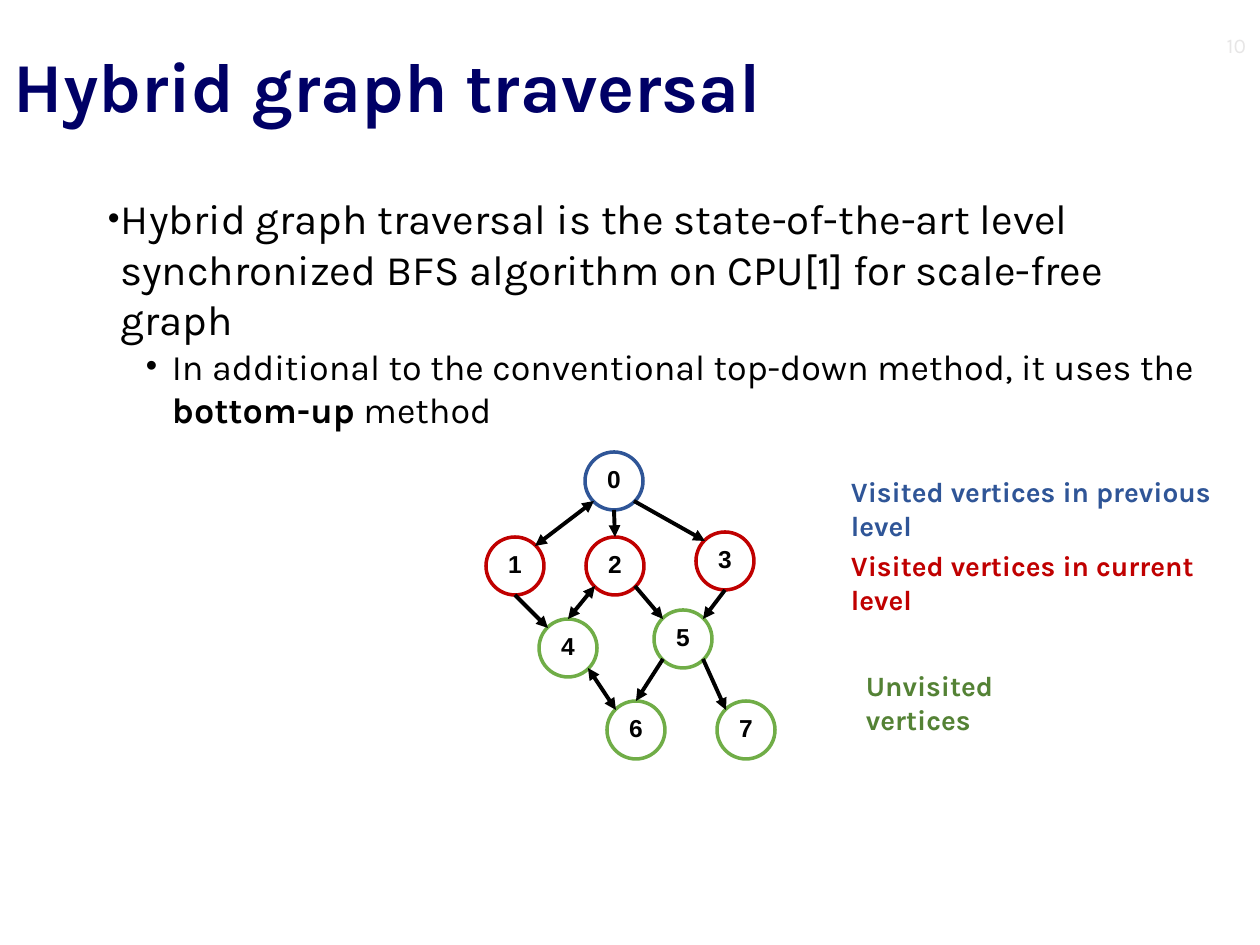
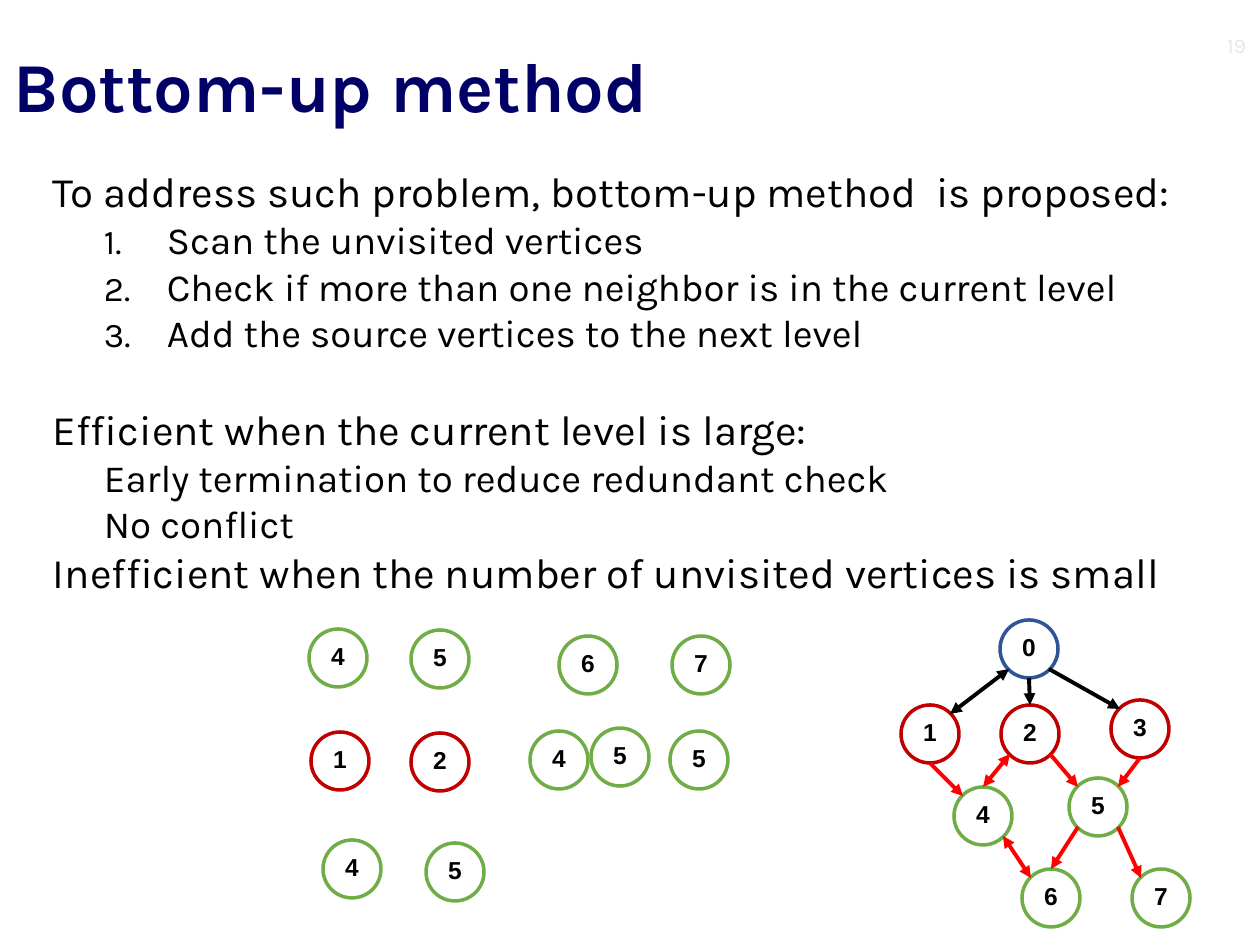
from lxml import etree
from pptx import Presentation
from pptx.dml.color import RGBColor
from pptx.enum.shapes import MSO_CONNECTOR as Line, MSO_SHAPE as Shape
from pptx.enum.text import MSO_ANCHOR as Anchor, PP_ALIGN as Align
from pptx.oxml.ns import qn
from pptx.util import Pt

EMU_PER_PX = 914400 / 126
NAVY = RGBColor(0x00, 0x00, 0x66)
BLACK = RGBColor(0x00, 0x00, 0x00)
WHITE = RGBColor(0xFF, 0xFF, 0xFF)
PALE = RGBColor(0xE7, 0xE6, 0xE6)
BLUE = RGBColor(0x2F, 0x55, 0x97)
CRIMSON = RGBColor(0xC0, 0x00, 0x00)
RED = RGBColor(0xFF, 0x00, 0x00)
GREEN = RGBColor(0x70, 0xAD, 0x47)
DARK_GREEN = RGBColor(0x54, 0x82, 0x35)

DIAMETER = 58
# Where edges touch a vertex, from its top left corner
SITES = {"top": (29, 0), "bottom": (29, 58), "top left": (9, 9),
         "top right": (49, 9), "bottom left": (9, 49), "bottom right": (49, 49)}

# Graph: label, left, top, colour
VERTICES = [
    ("1", 486, 537, CRIMSON), ("2", 586, 537, CRIMSON), ("3", 696, 532, CRIMSON),
    ("7", 717, 701, GREEN), ("6", 607, 701, GREEN), ("5", 654, 610, GREEN),
    ("4", 539, 619, GREEN), ("0", 585, 452, BLUE),
]
# Start vertex and site, end vertex and site, arrowheads at both ends
EDGES = [
    ("0", "bottom left", "1", "top right", True),
    ("0", "bottom right", "3", "top left", False),
    ("0", "bottom", "2", "top", False),
    ("4", "top", "2", "bottom left", True),
    ("1", "bottom", "4", "top left", False),
    ("2", "bottom right", "5", "top left", False),
    ("3", "bottom", "5", "top right", False),
    ("6", "top left", "4", "bottom right", True),
    ("5", "bottom left", "6", "top", False),
    ("5", "bottom right", "7", "top left", False),
]

# Body lines: text (bold between **), size, left margin, indent, bullet, bullet %, space before
HYBRID_BODY = [
    ("Hybrid graph traversal is the state-of-the-art level synchronized BFS "
     "algorithm on CPU[1] for scale-free graph", 24, 13, -13, "•", 80, 0),
    ("In additional to the conventional top-down method, it uses the "
     "**bottom-up** method", 20.5, 64, -26, "•", 90, 0),
]
BOTTOM_UP_BODY = [
    ("To address such problem, bottom-up method  is proposed:", 24, 0, 0, None, 0, 0),
    ("Scan the unvisited vertices", 22, 114, -63, "1.", 90, 0),
    ("Check if more than one neighbor is in the current level", 22, 114, -63, "1.", 90, 0),
    ("Add the source vertices to the next level", 22, 114, -63, "1.", 90, 0),
    ("Efficient when the current level is large:", 24, 0, 0, None, 0, 28),
    ("Early termination to reduce redundant check", 22, 51, 0, None, 0, 0),
    ("No conflict", 22, 51, 0, None, 0, 0),
    ("Inefficient when the number of unvisited vertices is small", 24, 0, 0, None, 0, 0),
]


def px(*lengths):
    return [round(length * EMU_PER_PX) for length in lengths]


def add_text(page, place, lines, color=BLACK, bold=None, anchor=Anchor.TOP, align=Align.LEFT):
    frame = page.shapes.add_textbox(*px(*place)).text_frame
    frame.word_wrap = True
    frame.vertical_anchor = anchor
    frame.margin_left, frame.margin_right, frame.margin_top, frame.margin_bottom = px(14, 14, 7, 7)
    for index, (text, size, margin, indent, bullet, percent, space) in enumerate(lines):
        para = frame.paragraphs[0] if index == 0 else frame.add_paragraph()
        para.alignment = align
        para.space_before = Pt(space)
        props = para._p.get_or_add_pPr()
        props.set("marL", str(px(margin)[0]))
        props.set("indent", str(px(indent)[0]))
        if bullet:
            etree.SubElement(props, qn("a:buSzPct"), val=str(percent * 1000))
            if bullet == "1.":
                etree.SubElement(props, qn("a:buAutoNum"), type="arabicPeriod")
            else:
                etree.SubElement(props, qn("a:buFont"), typeface="Arial")
                etree.SubElement(props, qn("a:buChar"), char=bullet)
        font = para.font
        font.name, font.size, font.bold = "Karla", Pt(size), bold
        font.color.rgb = color
        for part, words in enumerate(text.split("**")):
            span = para.add_run()
            span.text = words
            if part % 2:
                span.font.bold = True


deck = Presentation()
deck.slide_width, deck.slide_height = px(1260, 945)

# Slides: title, number, body place and lines, graph shift, colour of the lower edges
SLIDES = [
    ("Hybrid graph traversal", "10", (94, 186, 1140, 239), HYBRID_BODY, (0, 0), BLACK),
    ("Bottom-up method", "19", (39, 159, 1218, 239), BOTTOM_UP_BODY, (415, 168), RED),
]
# Rows of loose vertices on the second slide
SCAN_STEPS = [
    ("7", 672, 636, GREEN), ("6", 559, 636, GREEN), ("5", 411, 630, GREEN),
    ("4", 309, 629, GREEN), ("1", 311, 732, CRIMSON), ("2", 411, 733, CRIMSON),
    ("5", 591, 728, GREEN), ("4", 530, 731, GREEN), ("5", 670, 731, GREEN),
    ("4", 323, 840, GREEN), ("5", 426, 843, GREEN),
]

for title, number, body_place, body, (shift_x, shift_y), lower_color in SLIDES:
    page = deck.slides.add_slide(deck.slide_layouts[6])
    first = title == SLIDES[0][0]
    add_text(page, body_place, body)
    add_text(page, (0, 40, 1260, 93), [(title, 40, 0, 0, None, 0, 0)], NAVY, True, Anchor.BOTTOM)
    add_text(page, (1140, 25, 120, 40), [(number, 12, 0, 0, None, 0, 0)], PALE,
             anchor=Anchor.MIDDLE, align=Align.RIGHT)

    # Vertices
    canvas = page.shapes.add_group_shape().shapes if first else page.shapes
    graph = [(label, left + shift_x, top + shift_y, color) for label, left, top, color in VERTICES]
    for label, left, top, color in graph + ([] if first else SCAN_STEPS):
        vertex = canvas.add_shape(Shape.OVAL, *px(left, top, DIAMETER, DIAMETER))
        vertex.shadow.inherit = False
        vertex.fill.solid()
        vertex.fill.fore_color.rgb = WHITE
        vertex.line.color.rgb = color
        vertex.line.width = Pt(2)
        frame = vertex.text_frame
        frame.word_wrap = False
        frame.vertical_anchor = Anchor.MIDDLE
        para = frame.paragraphs[0]
        para.alignment = Align.CENTER
        para.line_spacing = 0.9
        para.font.name, para.font.size, para.font.bold = "Arial", Pt(14), True
        para.font.color.rgb = BLACK
        para.add_run().text = label

    # Edges
    corners = {label: (left, top) for label, left, top, color in graph}
    for start, start_site, end, end_site, two_way in EDGES:
        ends = [corner + offset
                for name, site in ((start, start_site), (end, end_site))
                for corner, offset in zip(corners[name], SITES[site])]
        edge = canvas.add_connector(Line.STRAIGHT, *px(*ends))
        edge.line.color.rgb = BLACK if start == "0" else lower_color
        edge.line.width = Pt(2.25)
        outline = edge.line._get_or_add_ln()
        if two_way:
            etree.SubElement(outline, qn("a:headEnd"), type="triangle")
        etree.SubElement(outline, qn("a:tailEnd"), type="triangle")
        etree.SubElement(edge._element.spPr, qn("a:effectLst"))

    # Legend
    if first:
        for text, left, top, width, color in [
            ("Visited vertices in previous level", 837, 468, 406, BLUE),
            ("Visited vertices in current level", 837, 542, 389, CRIMSON),
            ("Unvisited vertices", 852, 662, 231, DARK_GREEN),
        ]:
            add_text(page, (left, top, width, 47), [(text, 16, 0, 0, None, 0, 0)], color, True)

deck.save("out.pptx")
